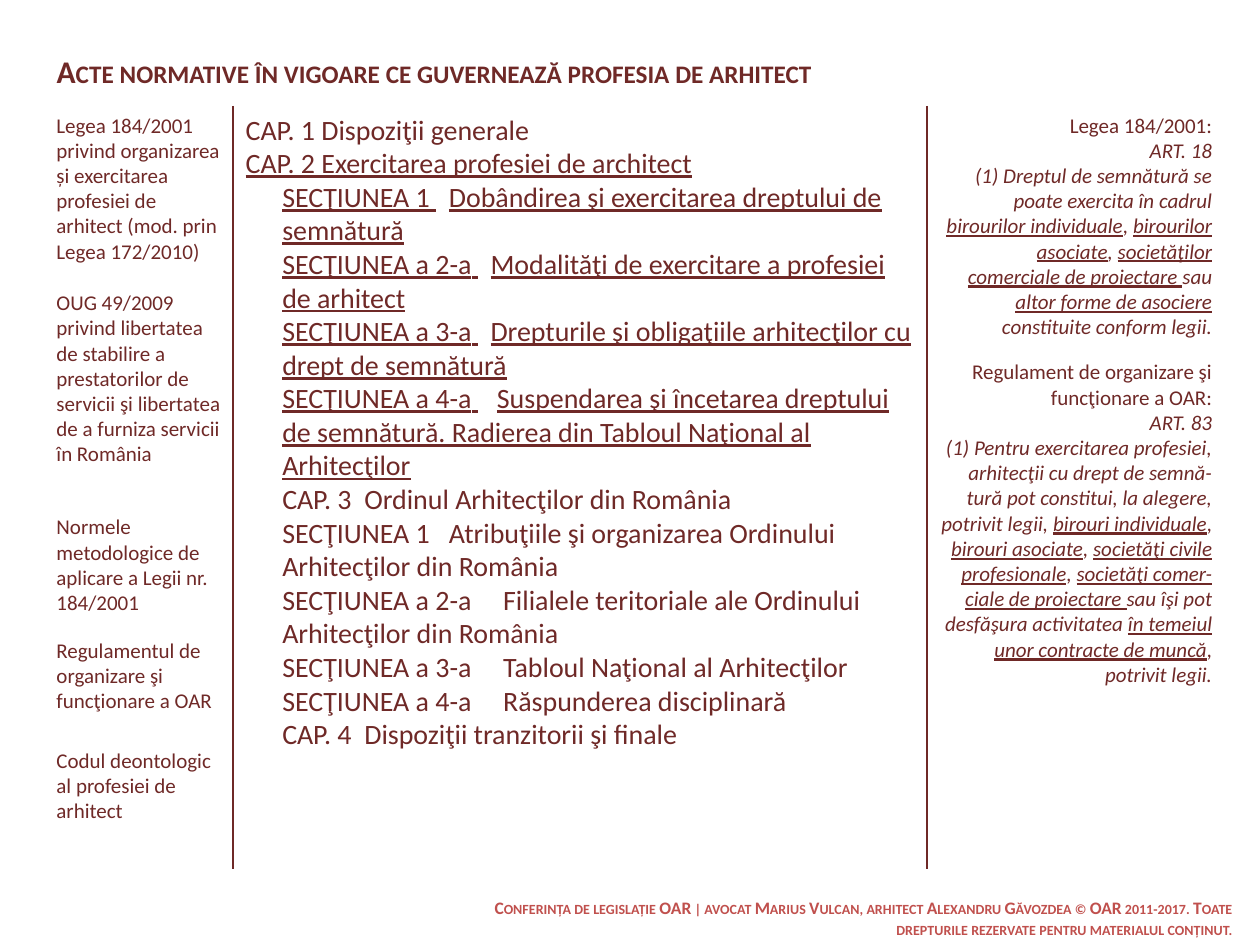
"""Build the slide on the legal acts that govern the architect's profession."""
from dataclasses import dataclass

from lxml import etree
from pptx import Presentation, util as u
from pptx.dml import color
from pptx.enum import shapes, text
from pptx.oxml import ns


@dataclass(frozen=True)
class Theme:
    font: str = "Calibri"
    dark: str = "6F2927"
    accent: str = "C0504D"
    title: int = 18
    outline: int = 16
    detail: int = 12
    footer: int = 10
    rule: float = 1.25
    space: float = 0.226


THEME = Theme()
TITLE = "Acte normative în vigoare ce guvernează profesia de arhitect"
FOOTER = ("Conferința de legislație OAR | avocat Marius Vulcan, arhitect Alexandru Găvozdea "
          "© OAR 2011-2017. Toate drepturile rezervate pentru materialul conținut.")

# (label, gap in spaces, heading, indented, underlined)
OUTLINE = [
    ("CAP. 1", 1, "Dispoziţii generale", False, False),
    ("CAP. 2", 1, "Exercitarea profesiei de architect", False, True),
    ("SECŢIUNEA 1", 3, "Dobândirea şi exercitarea dreptului de semnătură", True, True),
    ("SECŢIUNEA a 2-a", 3, "Modalităţi de exercitare a profesiei de arhitect", True, True),
    ("SECŢIUNEA a 3-a", 3, "Drepturile şi obligaţiile arhitecţilor cu drept de semnătură",
     True, True),
    ("SECŢIUNEA a 4-a", 4, "Suspendarea şi încetarea dreptului de semnătură. Radierea din "
     "Tabloul Naţional al Arhitecţilor", True, True),
    ("CAP. 3", 2, "Ordinul Arhitecţilor din România", True, False),
    ("SECŢIUNEA 1", 3, "Atribuţiile şi organizarea Ordinului Arhitecţilor din România",
     True, False),
    ("SECŢIUNEA a 2-a", 5, "Filialele teritoriale ale Ordinului Arhitecţilor din România",
     True, False),
    ("SECŢIUNEA a 3-a", 5, "Tabloul Naţional al Arhitecţilor", True, False),
    ("SECŢIUNEA a 4-a", 5, "Răspunderea disciplinară", True, False),
    ("CAP. 4", 2, "Dispoziţii tranzitorii şi finale", True, False),
]
ACTS = [
    (0.84, 0.39, "Legea 184/2001 privind organizarea și exercitarea profesiei de arhitect "
     "(mod. prin Legea 172/2010)"),
    (2.25, 0.39, "OUG 49/2009 privind libertatea de stabilire a prestatorilor de servicii şi "
     "libertatea de a furniza servicii în România"),
    (4.03, 0.59, "Normele metodologice de aplicare a Legii nr. 184/2001"),
    (5.01, 0.59, "Regulamentul de organizare şi funcţionare a OAR"),
    (5.88, 0.59, "Codul deontologic al profesiei de arhitect"),
]
ARTICLES = [
    (0.84, "Legea 184/2001:", "ART. 18",
     "(1) Dreptul de semnătură se poate exercita în cadrul _birourilor individuale_, "
     "_birourilor asociate_, _societăţilor comerciale de proiectare _sau "
     "_altor forme de asociere_ constituite conform legii."),
    (2.8, "Regulament de organizare şi funcţionare a OAR:", "ART. 83",
     "(1) Pentru exercitarea profesiei, arhitecţii cu drept de semnă-tură pot constitui, la "
     "alegere, potrivit legii, _birouri individuale_, _birouri asociate_, _societăţi civile "
     "profesionale_, _societăţi comer-ciale de proiectare _sau îşi pot desfăşura activitatea "
     "_în temeiul unor contracte de muncă_, potrivit legii."),
]
LEFT, OUTLINE_LEFT, ARTICLE_LEFT, RIGHT = 0.35, 1.85, 7.36, 9.72
TOP, BOTTOM = 0.84, 6.9
INDENT = 0.29


def apply(target, values):
    for name, value in values.items():
        setattr(target, name, value)


def place(shape, left, top, width, height, anchor=text.MSO_ANCHOR.TOP):
    apply(shape, dict(left=u.Inches(left), top=u.Inches(top),
                      width=u.Inches(width), height=u.Inches(height)))
    apply(shape.text_frame, dict(word_wrap=True, auto_size=text.MSO_AUTO_SIZE.NONE,
                                 vertical_anchor=anchor))
    return shape.text_frame


def add_box(slide, *area, **options):
    return place(slide.shapes.add_textbox(0, 0, 0, 0), *area, **options)


def add_paragraph(frame, first, align=text.PP_ALIGN.LEFT, indent=0):
    paragraph = frame.paragraphs[0] if first else frame.add_paragraph()
    apply(paragraph, dict(alignment=align, space_before=u.Pt(0)))
    properties = paragraph._p.get_or_add_pPr()
    properties.set("marL", str(u.Inches(indent)))
    properties.set("indent", "0")
    etree.SubElement(properties, ns.qn("a:buNone"))
    return paragraph


def add_run(paragraph, words, size, ink=THEME.dark, attributes=(), **style):
    run = paragraph.add_run()
    run.text = words
    apply(run.font, dict(name=THEME.font, size=u.Pt(size), **style))
    run.font.color.rgb = color.RGBColor.from_string(ink)
    for name, value in attributes:
        run._r.get_or_add_rPr().set(name, value)


def add_outline(frame):
    for row, (label, gap, heading, indented, underlined) in enumerate(OUTLINE):
        paragraph = add_paragraph(frame, row == 0, indent=INDENT * indented)
        spacing = round((gap - 1) * THEME.space * THEME.outline * 100)
        for words, attributes in ((label, ()), (" ", [("spc", str(spacing))]), (heading, ())):
            add_run(paragraph, words, THEME.outline, attributes=attributes,
                    underline=underlined)


def add_article(frame, source, article, wording):
    for row, (line, italic) in enumerate([(source, False), (article, True), (wording, True)]):
        paragraph = add_paragraph(frame, row == 0, text.PP_ALIGN.RIGHT)
        for part, words in enumerate(line.split("_")):
            add_run(paragraph, words, THEME.detail, italic=italic, underline=part % 2 == 1)


def add_divider(slide, x):
    divider = slide.shapes.add_connector(
        shapes.MSO_CONNECTOR.STRAIGHT, *map(u.Inches, (x, TOP, x, BOTTOM)))
    divider.line.width = u.Pt(THEME.rule)
    divider.line.color.rgb = color.RGBColor.from_string(THEME.dark)
    etree.SubElement(divider._element.spPr, ns.qn("a:effectLst"))


def main():
    deck = Presentation()
    apply(deck, dict(slide_width=u.Inches(10), slide_height=u.Inches(7.5)))
    slide = deck.slides.add_slide(deck.slide_layouts[1])
    title, outline = slide.placeholders
    small_caps = [("cap", "small")]

    heading = add_paragraph(place(title, LEFT, 0.36, 9.15, 0.39), True)
    add_run(heading, TITLE, THEME.title, attributes=small_caps, bold=True)
    add_outline(place(outline, OUTLINE_LEFT, TOP, ARTICLE_LEFT - OUTLINE_LEFT, 3.39))
    for top, height, act in ACTS:
        frame = add_box(slide, LEFT, top, OUTLINE_LEFT - LEFT, height)
        add_run(add_paragraph(frame, True), act, THEME.detail)
    for top, *lines in ARTICLES:
        add_article(add_box(slide, ARTICLE_LEFT, top, RIGHT - ARTICLE_LEFT, 1.81), *lines)
    for x in (OUTLINE_LEFT, ARTICLE_LEFT):
        add_divider(slide, x)

    frame = add_box(slide, 3.82, 7.19, 6.06, 0.19, anchor=text.MSO_ANCHOR.MIDDLE)
    add_run(add_paragraph(frame, True, text.PP_ALIGN.RIGHT), FOOTER, THEME.footer,
            THEME.accent, small_caps, bold=True)
    deck.save("out.pptx")


if __name__ == "__main__":
    main()
